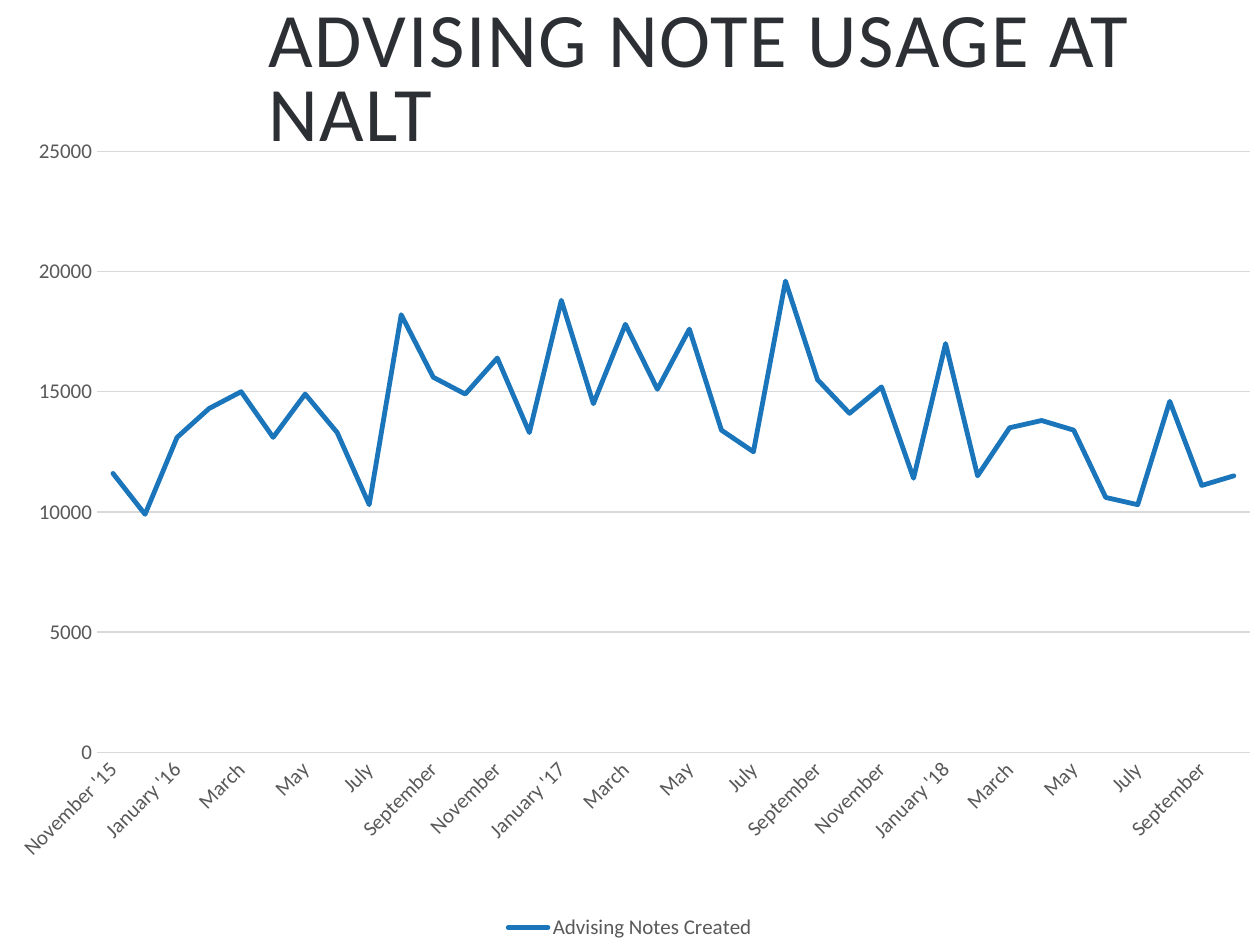
"""Build a slide with a line chart of monthly advising note usage."""
from dataclasses import dataclass
from typing import Optional

from lxml.etree import SubElement
from pptx import Presentation
from pptx.chart.chart import Chart
from pptx.chart.data import CategoryChartData
from pptx.dml.color import RGBColor
from pptx.enum.chart import XL_CHART_TYPE, XL_LEGEND_POSITION, XL_MARKER_STYLE, XL_TICK_MARK
from pptx.enum.text import MSO_ANCHOR
from pptx.oxml import parse_xml
from pptx.oxml.ns import nsdecls, qn
from pptx.slide import Slide
from pptx.util import Cm, Pt

COLORS = {"title": "2C2F34", "label": "595959", "grid": "D9D9D9", "series": "1B75BB"}
FONT = "Calibri"
MONTHS = ["January", "February", "March", "April", "May", "June", "July",
          "August", "September", "October", "November", "December"]
NOTES_CREATED = [
    11600, 9900,
    13100, 14300, 15000, 13100, 14900, 13300, 10300, 18200, 15600, 14900, 16400, 13300,
    18800, 14500, 17800, 15100, 17600, 13400, 12500, 19600, 15500, 14100, 15200, 11400,
    17000, 11500, 13500, 13800, 13400, 10600, 10300, 14600, 11100, 11500,
]
FIRST_MONTH, FIRST_YEAR = 10, 15


@dataclass
class AxisStyle:
    name: str
    line_color: Optional[str]
    gridlines: bool
    rotation: int


AXIS_STYLES = [
    AxisStyle("category_axis", COLORS["grid"], False, -2700000),
    AxisStyle("value_axis", None, True, 0),
]


def month_label(index: int) -> str:
    """Name a month, with the year on the first month and on each January."""
    years, month = divmod(FIRST_MONTH + index, len(MONTHS))
    with_year = index == 0 or month == 0
    return MONTHS[month] + (f" '{FIRST_YEAR + years}" if with_year else "")


def style_font(font, size: float, color: str) -> None:
    """Set typeface, size and colour."""
    font.name = FONT
    font.size = Pt(size)
    font.bold = False
    font.color.rgb = RGBColor.from_string(color)


def style_line(line, color: str, width: float) -> None:
    """Set line colour and width."""
    line.color.rgb = RGBColor.from_string(color)
    line.width = Pt(width)


def style_axis(chart: Chart, style: AxisStyle) -> None:
    """Format one chart axis."""
    axis = getattr(chart, style.name)
    axis.major_tick_mark = axis.minor_tick_mark = XL_TICK_MARK.NONE
    axis.has_major_gridlines = style.gridlines
    if style.gridlines:
        style_line(axis.major_gridlines.format.line, COLORS["grid"], 0.75)
    if style.line_color:
        style_line(axis.format.line, style.line_color, 0.75)
    else:
        axis.format.line.fill.background()
    style_font(axis.tick_labels.font, 12, COLORS["label"])
    body = axis._element.find(qn("c:txPr")).find(qn("a:bodyPr"))
    body.set("rot", str(style.rotation))


def set_plot_layout(chart: Chart, x: float, y: float, w: float, h: float) -> None:
    """Fix the inner plot area as fractions of the chart."""
    plot_area = chart._chartSpace.chart.plotArea
    for layout in plot_area.findall(qn("c:layout")):
        plot_area.remove(layout)
    layout = parse_xml(f"<c:layout {nsdecls('c')}><c:manualLayout/></c:layout>")
    settings = {"layoutTarget": "inner", "xMode": "edge", "yMode": "edge",
                "x": x, "y": y, "w": w, "h": h}
    for tag, value in settings.items():
        SubElement(layout[0], qn(f"c:{tag}")).set("val", str(value))
    plot_area.insert(0, layout)


def add_title(slide: Slide, text: str) -> None:
    """Add the slide title."""
    shape = slide.shapes.add_textbox(Cm(5.16), Cm(-0.43), Cm(20.24), Cm(4.17))
    frame = shape.text_frame
    frame.word_wrap = True
    frame.vertical_anchor = MSO_ANCHOR.MIDDLE
    paragraph = frame.paragraphs[0]
    paragraph.line_spacing = 0.8
    run = paragraph.add_run()
    run.text = text
    style_font(run.font, 44, COLORS["title"])
    run.font._element.set("spc", "100")


def add_usage_chart(slide: Slide) -> None:
    """Add the line chart of notes created each month."""
    data = CategoryChartData()
    data.categories = [month_label(index) for index in range(len(NOTES_CREATED))]
    data.add_series("Advising Notes Created", NOTES_CREATED)
    chart = slide.shapes.add_chart(
        XL_CHART_TYPE.LINE, Cm(0), Cm(2.74), Cm(25.4), Cm(16.31), data).chart
    chart.has_title = False
    chart.has_legend = True
    chart.legend.position = XL_LEGEND_POSITION.BOTTOM
    chart.legend.include_in_layout = False
    style_font(chart.legend.font, 12, COLORS["label"])
    for style in AXIS_STYLES:
        style_axis(chart, style)
    chart.value_axis.minimum_scale = 0
    chart.value_axis.maximum_scale = 25000
    chart.value_axis.major_unit = 5000
    label_skip = parse_xml(f'<c:tickLblSkip {nsdecls("c")} val="2"/>')
    chart.category_axis._element.find(qn("c:noMultiLvlLbl")).addprevious(label_skip)
    plot = chart.plots[0]
    plot.vary_by_categories = False
    series = plot.series[0]
    series.smooth = False
    series.marker.style = XL_MARKER_STYLE.NONE
    style_line(series.format.line, COLORS["series"], 2.75)
    series.format.line._ln.set("cap", "rnd")
    set_plot_layout(chart, 0.077, 0.019, 0.915, 0.743)


def main() -> None:
    """Build and save the presentation."""
    presentation = Presentation()
    presentation.slide_width, presentation.slide_height = Cm(25.4), Cm(19.05)
    slide = presentation.slides.add_slide(presentation.slide_layouts[6])
    add_title(slide, "ADVISING NOTE USAGE AT NALT")
    add_usage_chart(slide)
    presentation.save("out.pptx")


if __name__ == "__main__":
    main()
